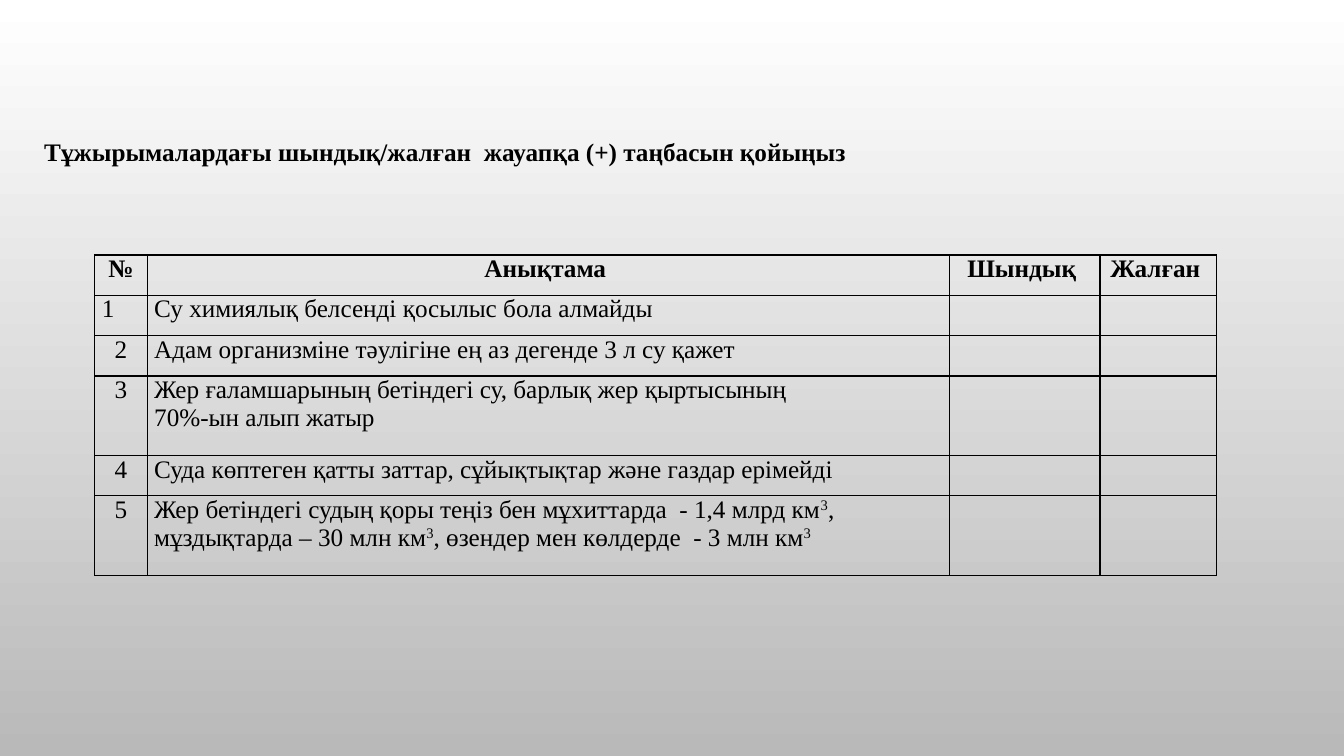
from lxml.etree import SubElement
from pptx import Presentation
from pptx.dml.color import RGBColor
from pptx.enum.text import PP_ALIGN as Align
from pptx.oxml.ns import qn
from pptx.util import Inches, Pt

COLORS = {"ink": "000000", "top": "FFFFFF", "bottom": "B9B9B9"}
TITLE = "Тұжырымалардағы шындық/жалған  жауапқа (+) таңбасын қойыңыз"
HEADERS = ["№", "Анықтама ", "Шындық ", "Жалған "]
# A pair of ^ marks encloses superscript; a newline starts a paragraph.
STATEMENTS = [
    "Су химиялық белсенді қосылыс бола алмайды",
    "Адам организміне тәулігіне ең аз дегенде 3 л су қажет",
    "Жер ғаламшарының бетіндегі су, барлық жер қыртысының\n70%-ын алып жатыр",
    "Суда көптеген қатты заттар, сұйықтықтар және газдар ерімейді",
    "Жер бетіндегі судың қоры теңіз бен мұхиттарда  - 1,4 млрд км^3^, "
    "мұздықтарда – 30 млн км^3^, өзендер мен көлдерде  - 3 млн км^3^",
]
COLUMN_WIDTHS = [0.52, 7.96, 1.49, 1.16]
ROW_HEIGHTS = [0.4, 0.4, 0.4, 0.79, 0.4, 0.79]


class SlideBuilder:
    font_name = "Times New Roman"
    font_size = Pt(18)

    def __init__(self, presentation):
        self.slide = presentation.slides.add_slide(presentation.slide_layouts[6])

    def background(self):
        fill = self.slide.background.fill
        fill.gradient()
        fill.gradient_angle = 270
        for stop, name in zip(fill.gradient_stops, ("top", "bottom")):
            stop.color.rgb = RGBColor.from_string(COLORS[name])

    def add_text(self, frame, text, bold=False, align=Align.LEFT):
        for index, line in enumerate(text.split("\n")):
            paragraph = frame.add_paragraph() if index else frame.paragraphs[0]
            paragraph.alignment = align
            font = paragraph.font
            font.name, font.size, font.bold = self.font_name, self.font_size, bold
            font.color.rgb = RGBColor.from_string(COLORS["ink"])
            for position, part in enumerate(line.split("^")):
                if part:
                    run = paragraph.add_run()
                    run.text = part
                    if position % 2:
                        run.font._element.set("baseline", "30000")

    def title(self, text, left, top, width, height):
        box = self.slide.shapes.add_textbox(
            Inches(left), Inches(top), Inches(width), Inches(height))
        box.text_frame.word_wrap = True
        box.text_frame.margin_top = Inches(0.08)
        self.add_text(box.text_frame, text, bold=True)

    def style_cell(self, cell):
        cell.margin_left = cell.margin_right = Inches(0.07)
        cell.margin_top = cell.margin_bottom = 0
        properties = cell._tc.get_or_add_tcPr()
        for side in ("a:lnL", "a:lnR", "a:lnT", "a:lnB"):
            line = SubElement(properties, qn(side), w=str(Pt(1)))
            fill = SubElement(line, qn("a:solidFill"))
            SubElement(fill, qn("a:srgbClr"), val=COLORS["ink"])
        cell.fill.background()

    def table(self, rows, left, top):
        table = self.slide.shapes.add_table(
            len(rows), len(COLUMN_WIDTHS), Inches(left), Inches(top),
            Inches(sum(COLUMN_WIDTHS)), Inches(sum(ROW_HEIGHTS))).table
        table.first_row = table.horz_banding = False
        for column, width in zip(table.columns, COLUMN_WIDTHS):
            column.width = Inches(width)
        for row, height in zip(table.rows, ROW_HEIGHTS):
            row.height = Inches(height)
        for row_index, texts in enumerate(rows):
            for column_index, text in enumerate(texts):
                cell = table.cell(row_index, column_index)
                self.style_cell(cell)
                is_header = row_index == 0
                centred = is_header or (column_index == 0 and row_index > 1)
                self.add_text(cell.text_frame, text, bold=is_header,
                              align=Align.CENTER if centred else Align.LEFT)


def main():
    presentation = Presentation()
    presentation.slide_width = Inches(13.33)
    presentation.slide_height = Inches(7.5)
    builder = SlideBuilder(presentation)
    builder.background()
    rows = [HEADERS] + [[str(number), statement, "", ""]
                        for number, statement in enumerate(STATEMENTS, 1)]
    builder.table(rows, 0.94, 2.53)
    builder.title(TITLE, 0.34, 1.27, 12.99, 0.71)
    presentation.save("out.pptx")


if __name__ == "__main__":
    main()
